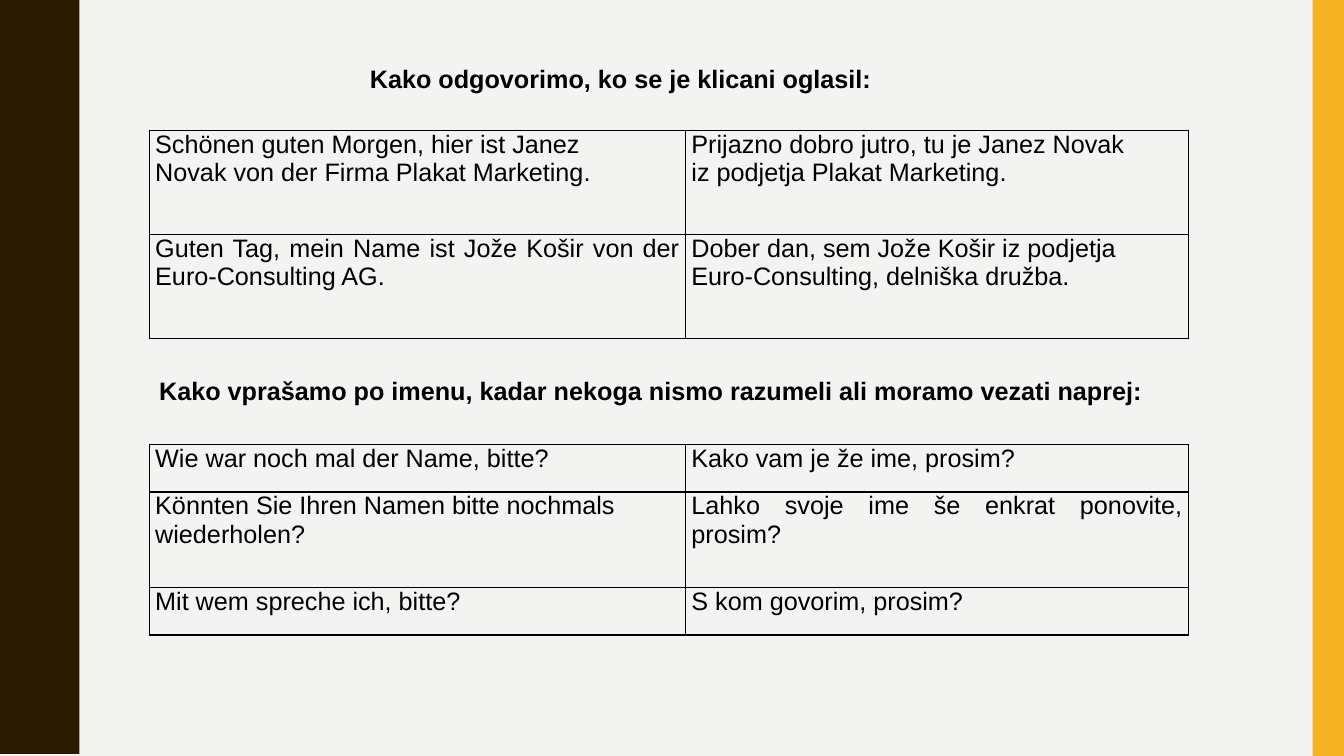
from pptx import Presentation, util as u
from pptx.dml.color import RGBColor
from pptx.enum import shapes, text
from pptx.oxml import parse_xml
from pptx.oxml.ns import nsdecls

SLIDE_W, SLIDE_H = 33.86, 19.05
TABLE_LEFT = 3.76
COLUMN_WIDTHS = (13.51, 12.67)
WAVE_COUNT = 5
# Rising half of one wave: x and y in cm
HALF_WAVE = [(1.98, 0), (1.98, 0.18), (2.01, 0.36), (2.03, 0.51), (2.06, 0.64),
             (2.11, 0.74), (2.16, 0.84), (2.21, 0.97), (2.26, 1.07), (2.31, 1.17),
             (2.36, 1.27), (2.41, 1.4), (2.44, 1.55), (2.46, 1.73), (2.46, 1.9)]

GREETINGS = [
    ("Schönen guten Morgen, hier ist Janez\nNovak von der Firma Plakat Marketing.",
     "Prijazno dobro jutro, tu je Janez Novak\niz podjetja Plakat Marketing."),
    ("Guten Tag, mein Name ist Jože Košir von der Euro-Consulting AG.",
     "Dober dan, sem Jože Košir iz podjetja\nEuro-Consulting, delniška družba."),
]
NAME_QUESTIONS = [
    ("Wie war noch mal der Name, bitte?", "Kako vam je že ime, prosim?"),
    ("Könnten Sie Ihren Namen bitte nochmals\nwiederholen?",
     "Lahko svoje ime še enkrat ponovite, prosim?"),
    ("Mit wem spreche ich, bitte?", "S kom govorim, prosim?"),
]


def color(hex_code):
    return RGBColor.from_string(hex_code)


def paint(shape, hex_code):
    shape.shadow.inherit = False
    shape.fill.solid()
    shape.fill.fore_color.rgb = color(hex_code)
    shape.line.fill.background()


def style_text(frame, alignment, bold=False):
    for paragraph in frame.paragraphs:
        paragraph.alignment = alignment
        paragraph.font.name = "Arial"
        paragraph.font.size = u.Pt(18)
        paragraph.font.bold = bold
        paragraph.font.color.rgb = color("000000")


def add_wavy_edge(slide, height):
    wave = height / WAVE_COUNT
    period = HALF_WAVE + [(x, wave - y) for x, y in HALF_WAVE[-2::-1]]
    edge = [(x, y + wave * i) for i in range(WAVE_COUNT) for x, y in period]
    builder = slide.shapes.build_freeform(0, 0, scale=float(u.Cm(1)))
    builder.add_line_segments(edge + [(0, height)], close=True)
    paint(builder.convert_to_shape(), "2A1A00")


def add_side_band(slide, left, width, height):
    band = slide.shapes.add_shape(shapes.MSO_SHAPE.RECTANGLE, u.Cm(left), 0,
                                  u.Cm(width), u.Cm(height))
    paint(band, "F8B323")


def add_heading(slide, left, top, width, wording, alignment):
    heading = slide.shapes.add_textbox(u.Cm(left), u.Cm(top), u.Cm(width), u.Cm(1.02))
    frame = heading.text_frame
    frame.word_wrap = False
    frame.auto_size = text.MSO_AUTO_SIZE.SHAPE_TO_FIT_TEXT
    frame.vertical_anchor = text.MSO_ANCHOR.MIDDLE
    frame.text = wording
    style_text(frame, alignment, bold=True)


def style_cell(cell):
    cell.margin_left = cell.margin_right = u.Cm(0.15)
    cell.margin_top = cell.margin_bottom = 0
    properties = cell._tc.get_or_add_tcPr()
    for side in "LRTB":
        properties.append(parse_xml(
            f'<a:ln{side} {nsdecls("a")} w="{u.Pt(1)}"><a:solidFill>'
            f'<a:srgbClr val="000000"/></a:solidFill></a:ln{side}>'))
    cell.fill.background()


def add_phrase_table(slide, top, row_heights, phrases):
    """Place German phrases beside their Slovene translations."""
    table = slide.shapes.add_table(
        len(phrases), len(COLUMN_WIDTHS), u.Cm(TABLE_LEFT), u.Cm(top),
        u.Cm(sum(COLUMN_WIDTHS)), u.Cm(sum(row_heights))).table
    table.first_row = table.horz_banding = False
    for column, width in zip(table.columns, COLUMN_WIDTHS):
        column.width = u.Cm(width)
    for row, height, pair in zip(table.rows, row_heights, phrases):
        row.height = u.Cm(height)
        for cell, phrase in zip(row.cells, pair):
            cell.text = phrase
            style_cell(cell)
            style_text(cell.text_frame, text.PP_ALIGN.JUSTIFY)


def main():
    deck = Presentation()
    deck.slide_width, deck.slide_height = u.Cm(SLIDE_W), u.Cm(SLIDE_H)
    slide = deck.slides.add_slide(deck.slide_layouts[6])
    slide.background.fill.solid()
    slide.background.fill.fore_color.rgb = color("F3F3F2")

    add_wavy_edge(slide, SLIDE_H)
    add_side_band(slide, 33.07, SLIDE_W - 33.07, SLIDE_H)
    add_phrase_table(slide, 3.28, (2.62, 2.62), GREETINGS)
    add_phrase_table(slide, 11.2, (1.2, 2.4, 1.2), NAME_QUESTIONS)
    add_heading(slide, 9.07, 1.47, 13.26,
                "Kako odgovorimo, ko se je klicani oglasil:", text.PP_ALIGN.JUSTIFY)
    add_heading(slide, TABLE_LEFT, 9.32, 25.53,
                "Kako vprašamo po imenu, kadar nekoga nismo razumeli "
                "ali moramo vezati naprej:", text.PP_ALIGN.LEFT)
    deck.save("out.pptx")


if __name__ == "__main__":
    main()
